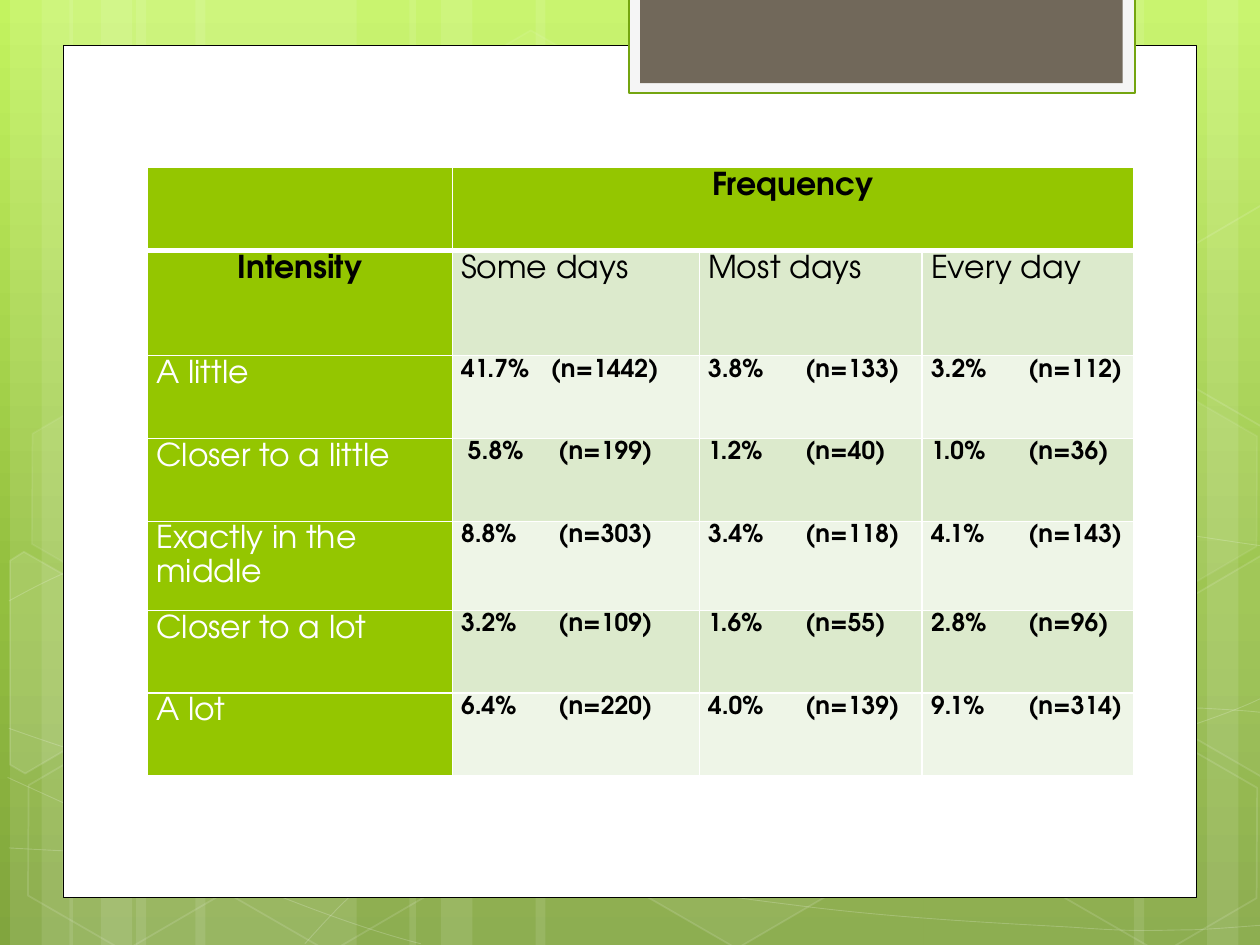
"""Build a slide with a table of intensity by frequency on a patterned green page."""
from dataclasses import dataclass

from lxml.etree import SubElement
from pptx import Presentation
from pptx.dml.color import RGBColor
from pptx.enum.shapes import MSO_SHAPE
from pptx.enum.text import PP_ALIGN
from pptx.oxml.ns import qn
from pptx.util import Inches, Pt


@dataclass(frozen=True)
class Theme:
    font: str = "TeX Gyre Adventor"
    label_size: int = 18
    value_size: int = 14
    black: str = "000000"
    white: str = "FFFFFF"
    green: str = "94C600"
    bands: tuple = ("EEF5E7", "DCEACC")
    tab_white: str = "F5F5F5"
    tab_line: str = "74A510"
    tab_brown: str = "71685A"
    sky: tuple = ((0, "C3F35F"), (62, "93BF3F"), (100, "81A53E"))


THEME = Theme()
SLIDE_WIDTH, SLIDE_HEIGHT = 10, 7.5

TITLES = ("", "Frequency")
HEADINGS = ("Intensity", "Some days", "Most days", "Every day")
RESULTS = [
    ("A little", ("41.7%", "(n=1442)"), ("3.8%", "(n=133)"), ("3.2%", "(n=112)")),
    ("Closer to a little", (" 5.8%", "(n=199)"), ("1.2%", "(n=40)"), ("1.0%", "(n=36)")),
    ("Exactly in the middle", ("8.8%", "(n=303)"), ("3.4%", "(n=118)"), ("4.1%", "(n=143)")),
    ("Closer to a lot", ("3.2%", "(n=109)"), ("1.6%", "(n=55)"), ("2.8%", "(n=96)")),
    ("A lot", ("6.4%", "(n=220)"), ("4.0%", "(n=139)"), ("9.1%", "(n=314)")),
]
TABLE_BOX = (1.17, 1.33, 7.83, 4.83)
COLUMN_SHARES = (2.42, 1.96, 1.77, 1.68)
ROW_SHARES = (0.66, 0.84, 0.66, 0.66, 0.71, 0.66, 0.66)
COUNT_TAB, WIDE_COUNT_TAB = 0.77, 0.71

STRIPES = [(1.08, 1.75), (0.08, 0.5), (0.33, 0.83), (1.55, 1.75), (0.55, 0.5), (0.8, 0.83),
           (7.33, 1.75), (9.58, 0.5), (9, 0.83), (4.25, 3.08), (3.25, 0.5), (3.5, 0.83)]
CURVES = [
    [(0.07, 6.73), (0.61, 6.76), (1.15, 6.79), (1.9, 6.78), (2.65, 6.77), (3.58, 6.75), (4.58, 6.65),
     (5.58, 6.55), (7, 6.36), (7.92, 6.17), (8.83, 5.98), (9.77, 5.68), (10.07, 5.51)],
    [(0.07, 4.77), (0.36, 4.61), (0.65, 4.46), (1.21, 4.31), (1.78, 4.16), (2.59, 3.94), (3.47, 3.87),
     (4.36, 3.8), (5.44, 3.79), (6.54, 3.87), (7.64, 3.95), (9.47, 4.26), (10.07, 4.34)],
    [(0.06, 6.17), (1.27, 6.72), (2.47, 7.27), (3.34, 7.49)],
    [(0.07, 5.78), (0.38, 5.89), (0.7, 6), (1.28, 6.16), (1.86, 6.31), (2.73, 6.56), (3.57, 6.73),
     (4.4, 6.9), (5.45, 7.08), (6.28, 7.18), (7.11, 7.29), (8, 7.33), (8.53, 7.36),
     (9.05, 7.4), (9.19, 7.38), (9.45, 7.38), (9.71, 7.37), (9.89, 7.35), (10.07, 7.34)],
    [(2.42, 7.49), (2.6, 7.29), (2.78, 7.09), (3.02, 6.91), (3.26, 6.73), (3.6, 6.53), (3.88, 6.39),
     (4.16, 6.25), (4.33, 6.19), (4.7, 6.09), (5.06, 5.99), (5.73, 5.85), (6.08, 5.78),
     (6.44, 5.71), (6.49, 5.71), (6.8, 5.69), (7.11, 5.66), (7.6, 5.63), (7.94, 5.62),
     (8.29, 5.61), (8.86, 5.62), (8.86, 5.62), (9.08, 5.62), (9.31, 5.62), (9.53, 5.62),
     (9.71, 5.63), (9.88, 5.64), (9.97, 5.65), (10.06, 5.66), (10.03, 5.65), (10.06, 5.66)],
]
HEXAGON_WIDTH, HEXAGON_HEIGHT = 1.75, 1.52
HEXAGONS = [(3.34, 0.36, 4, 8), (4.97, 5.89, 6, 12), (0.11, 5.91, None, 12), (0.14, 3.12, 7, 8),
            (1.74, 5.92, None, 12), (7.53, 4.53, 10, 12), (8.34, 5.93, None, 12), (8.34, 3.14, 7, 8)]
CUT_HEXAGONS = [
    ([(0.08, 4.45), (0.19, 4.38), (0.96, 4.82), (0.95, 5.7), (0.2, 6.14), (0.08, 6.07)], 10),
    ([(9.26, 4.85), (10.01, 4.41), (10.09, 4.46), (10.09, 6.13), (10.02, 6.17), (9.26, 5.73)], 4),
    ([(9.26, 2.07), (10.01, 1.63), (10.1, 1.68), (10.09, 3.35), (10.02, 3.39), (9.26, 2.95)], None),
]
PANELS = [
    ((0.5, 0.36, 9, 6.76), dict(fill=THEME.white, line=THEME.black, width=0.5)),
    ((4.99, -0.02, 4.02, 0.76), dict(fill=THEME.tab_white, line=THEME.tab_line, width=1.25)),
    ((5.08, -0.02, 3.83, 0.68), dict(fill=THEME.tab_brown)),
]


def add_solid(parent, color):
    solid = SubElement(parent, qn("a:solidFill"))
    SubElement(solid, qn("a:srgbClr"), val=color)


def style_shape(shape, fill=None, fill_alpha=100, line=None, line_alpha=100, width=1):
    shape.shadow.inherit = False
    for part, color in ((shape.fill, fill), (shape.line.fill, line)):
        if color is None:
            part.background()
        else:
            part.solid()
            part.fore_color.rgb = RGBColor.from_string(color)
    if line:
        shape.line.width = Pt(width)
    properties = shape._element.spPr
    for place, alpha in (("a:solidFill", fill_alpha), ("a:ln/a:solidFill", line_alpha)):
        color = properties.find("/".join(qn(step) for step in (place + "/a:srgbClr").split("/")))
        if color is not None and alpha < 100:
            SubElement(color, qn("a:alpha"), val=str(alpha * 1000))


def add_preset(page, kind, box, **style):
    shape = page.shapes.add_shape(kind, *(Inches(length) for length in box))
    style_shape(shape, **style)
    return shape


def add_outline(page, points, closed, **style):
    points = [(Inches(x), Inches(y)) for x, y in points]
    builder = page.shapes.build_freeform(*points[0])
    builder.add_line_segments(points[1:], close=closed)
    shape = builder.convert_to_shape()
    style_shape(shape, **style)
    return shape


def add_curve(page, controls, **style):
    outline = next(add_outline(page, controls, False, **style)._element.iter(qn("a:path")))
    segments = outline.findall(qn("a:lnTo"))
    for first in range(0, len(segments), 3):
        bend = SubElement(outline, qn("a:cubicBezTo"))
        for segment in segments[first:first + 3]:
            bend.append(segment[0])
            outline.remove(segment)


def glass(fill_alpha, line_alpha):
    return dict(fill=THEME.white if fill_alpha else None, fill_alpha=fill_alpha or 100,
                line=THEME.white, line_alpha=line_alpha)


def paint_background(page):
    page.background.fill.gradient()
    gradient = next(page._element.iter(qn("a:gradFill")))
    for child in list(gradient):
        gradient.remove(child)
    stops = SubElement(gradient, qn("a:gsLst"))
    for position, color in THEME.sky:
        stop = SubElement(stops, qn("a:gs"), pos=str(position * 1000))
        SubElement(stop, qn("a:srgbClr"), val=color)
    SubElement(gradient, qn("a:lin"), ang="5400000", scaled="0")


def draw_pattern(page):
    for left, width in STRIPES:
        add_preset(page, MSO_SHAPE.RECTANGLE, (left, 0, width, SLIDE_HEIGHT), fill=THEME.white, fill_alpha=10)
    for controls in CURVES:
        add_curve(page, controls, line=THEME.white, line_alpha=20, width=0.5)
    for left, top, fill_alpha, line_alpha in HEXAGONS:
        box = (left, top, HEXAGON_WIDTH, HEXAGON_HEIGHT)
        hexagon = add_preset(page, MSO_SHAPE.HEXAGON, box, **glass(fill_alpha, line_alpha))
        hexagon.adjustments[0], hexagon.adjustments[1] = 0.285, 1.155
        hexagon.rotation = 30
    for points, fill_alpha in CUT_HEXAGONS:
        add_outline(page, points, True, **glass(fill_alpha, 12))


def write_text(cell, text, size=THEME.label_size, color=THEME.black, bold=False, align=PP_ALIGN.LEFT, tab=None):
    cell.margin_left = cell.margin_right = Inches(0.07)
    cell.margin_top = cell.margin_bottom = 0
    para = cell.text_frame.paragraphs[0]
    para.alignment, para.line_spacing = align, 1.15
    if tab:
        stops = SubElement(para._p.get_or_add_pPr(), qn("a:tabLst"))
        SubElement(stops, qn("a:tab"), pos=str(Inches(tab)), algn="l")
    if text:
        span = para.add_run()
        span.text = text
        span.font.name, span.font.size, span.font.bold = THEME.font, Pt(size), bold
        span.font.color.rgb = RGBColor.from_string(color)


def style_cell(cell, row, column):
    properties = cell._tc.get_or_add_tcPr()
    for side, heavy in (("L", False), ("R", False), ("T", row == 1), ("B", row == 0)):
        add_solid(SubElement(properties, qn("a:ln" + side), w=str(Pt(3 if heavy else 1))), THEME.white)
    cell.fill.solid()
    color = THEME.green if row == 0 or column == 0 else THEME.bands[row % 2]
    cell.fill.fore_color.rgb = RGBColor.from_string(color)


def add_results(page):
    box = [Inches(length) for length in TABLE_BOX]
    table = page.shapes.add_table(len(ROW_SHARES), len(COLUMN_SHARES), *box).table
    for column, share in zip(table.columns, COLUMN_SHARES):
        column.width = int(box[2] * share / sum(COLUMN_SHARES))
    for row, share in zip(table.rows, ROW_SHARES):
        row.height = int(box[3] * share / sum(ROW_SHARES))
    for row in range(len(ROW_SHARES)):
        for column in range(len(COLUMN_SHARES)):
            style_cell(table.cell(row, column), row, column)
    table.cell(0, 1).merge(table.cell(0, 3))
    heading = dict(bold=True, align=PP_ALIGN.CENTER)
    for column, title in enumerate(TITLES):
        write_text(table.cell(0, column), title, **heading)
    for column, text in enumerate(HEADINGS):
        write_text(table.cell(1, column), text, **({} if column else heading))
    for row, (label, *values) in enumerate(RESULTS, 2):
        write_text(table.cell(row, 0), label, color=THEME.white)
        for column, (share, count) in enumerate(values, 1):
            tab = WIDE_COUNT_TAB if len(count) > 7 else COUNT_TAB
            write_text(table.cell(row, column), f"{share}\t{count}", size=THEME.value_size, bold=True, tab=tab)


def main():
    deck = Presentation()
    deck.slide_width, deck.slide_height = Inches(SLIDE_WIDTH), Inches(SLIDE_HEIGHT)
    page = deck.slides.add_slide(deck.slide_layouts[6])
    paint_background(page)
    draw_pattern(page)
    for box, style in PANELS:
        add_preset(page, MSO_SHAPE.RECTANGLE, box, **style)
    add_results(page)
    deck.save("out.pptx")


if __name__ == "__main__":
    main()
